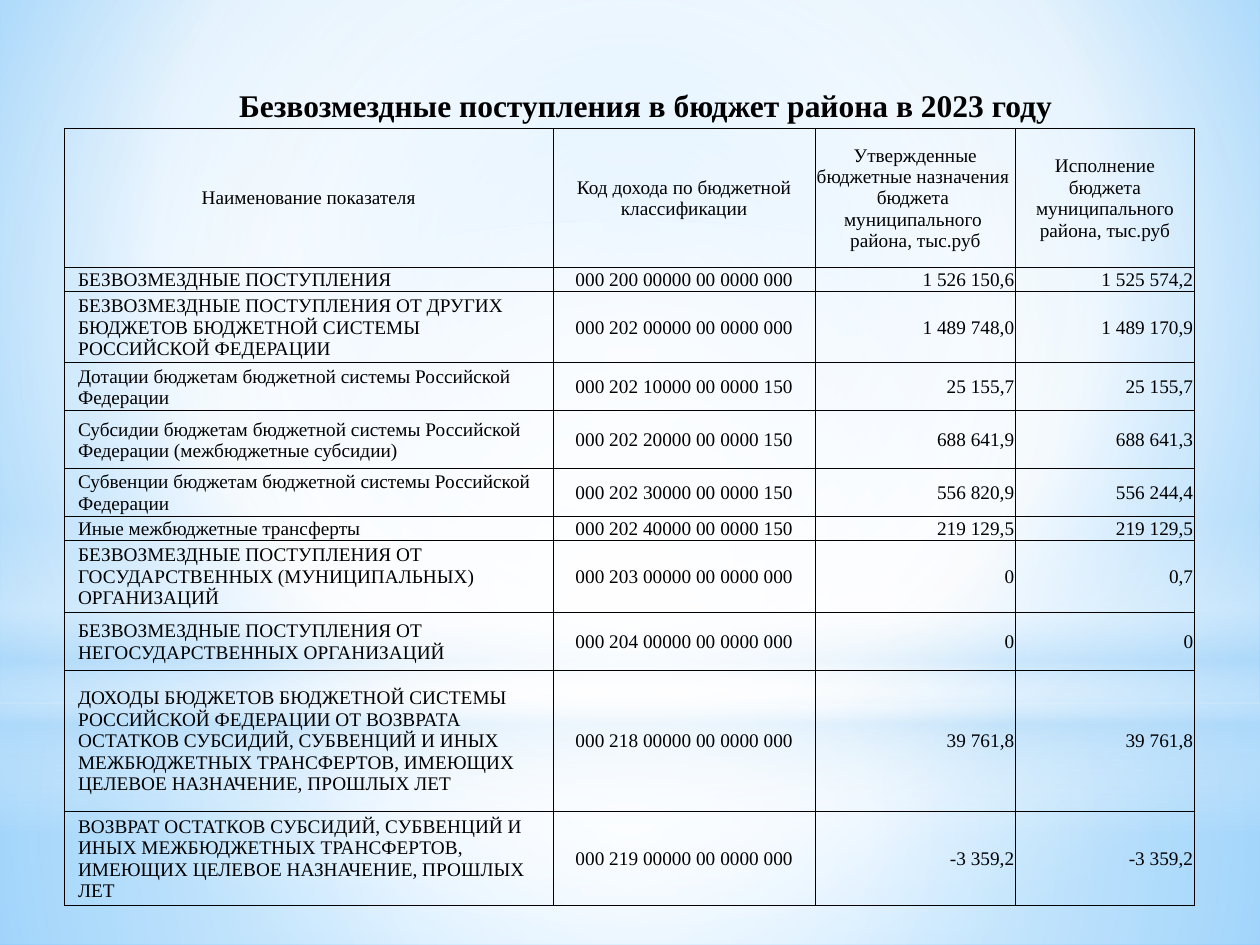
from pptx import Presentation
from pptx.dml.color import RGBColor
from pptx.enum.shapes import MSO_SHAPE
from pptx.enum.text import MSO_ANCHOR, MSO_AUTO_SIZE, PP_ALIGN
from pptx.oxml import parse_xml
from pptx.oxml.ns import nsdecls
from pptx.util import Inches, Pt

RECTANGLE, OVAL = MSO_SHAPE.RECTANGLE, MSO_SHAPE.OVAL
LEFT, CENTER, RIGHT = PP_ALIGN.LEFT, PP_ALIGN.CENTER, PP_ALIGN.RIGHT
TOP, MIDDLE, BOTTOM = MSO_ANCHOR.TOP, MSO_ANCHOR.MIDDLE, MSO_ANCHOR.BOTTOM
GROW = MSO_AUTO_SIZE.SHAPE_TO_FIT_TEXT
TITLE_ONLY = 5

BLACK = RGBColor(0x00, 0x00, 0x00)
WHITE = RGBColor(0xFF, 0xFF, 0xFF)
SKY = RGBColor(0x9E, 0xD5, 0xFF)
BLUE = RGBColor(0x5B, 0xB9, 0xFF)
MIST = RGBColor(0xB4, 0xDC, 0xFA)
FONT = "Times New Roman"

TITLE = "Безвозмездные поступления в бюджет района в 2023 году"
HEADER = (
    "Наименование показателя",
    "Код дохода по бюджетной классификации",
    "Утвержденные бюджетные назначения  бюджета  муниципального  района, тыс.руб",
    "Исполнение бюджета муниципального района, тыс.руб",
)
INCOME = [
    ("БЕЗВОЗМЕЗДНЫЕ ПОСТУПЛЕНИЯ",
     "000 200 00000 00 0000 000", "1 526 150,6", "1 525 574,2"),
    ("БЕЗВОЗМЕЗДНЫЕ ПОСТУПЛЕНИЯ ОТ ДРУГИХ БЮДЖЕТОВ БЮДЖЕТНОЙ СИСТЕМЫ РОССИЙСКОЙ ФЕДЕРАЦИИ",
     "000 202 00000 00 0000 000", "1 489 748,0", "1 489 170,9"),
    ("Дотации бюджетам бюджетной системы Российской Федерации",
     "000 202 10000 00 0000 150", "25 155,7", "25 155,7"),
    ("Субсидии бюджетам бюджетной системы Российской Федерации (межбюджетные субсидии)",
     "000 202 20000 00 0000 150", "688 641,9", "688 641,3"),
    ("Субвенции бюджетам бюджетной системы Российской Федерации",
     "000 202 30000 00 0000 150", "556 820,9", "556 244,4"),
    ("Иные межбюджетные трансферты",
     "000 202 40000 00 0000 150", "219 129,5", "219 129,5"),
    ("БЕЗВОЗМЕЗДНЫЕ ПОСТУПЛЕНИЯ ОТ ГОСУДАРСТВЕННЫХ (МУНИЦИПАЛЬНЫХ) ОРГАНИЗАЦИЙ",
     "000 203 00000 00 0000 000", "0", "0,7"),
    ("БЕЗВОЗМЕЗДНЫЕ ПОСТУПЛЕНИЯ ОТ НЕГОСУДАРСТВЕННЫХ ОРГАНИЗАЦИЙ",
     "000 204 00000 00 0000 000", "0", "0"),
    ("ДОХОДЫ БЮДЖЕТОВ БЮДЖЕТНОЙ СИСТЕМЫ РОССИЙСКОЙ ФЕДЕРАЦИИ ОТ ВОЗВРАТА ОСТАТКОВ "
     "СУБСИДИЙ, СУБВЕНЦИЙ И ИНЫХ МЕЖБЮДЖЕТНЫХ ТРАНСФЕРТОВ, ИМЕЮЩИХ ЦЕЛЕВОЕ НАЗНАЧЕНИЕ, ПРОШЛЫХ ЛЕТ",
     "000 218 00000 00 0000 000", "39 761,8", "39 761,8"),
    ("ВОЗВРАТ ОСТАТКОВ СУБСИДИЙ, СУБВЕНЦИЙ И ИНЫХ МЕЖБЮДЖЕТНЫХ ТРАНСФЕРТОВ, "
     "ИМЕЮЩИХ ЦЕЛЕВОЕ НАЗНАЧЕНИЕ, ПРОШЛЫХ ЛЕТ",
     "000 219 00000 00 0000 000", "-3 359,2", "-3 359,2"),
]
COLUMN_WIDTHS = (3.88, 2.08, 1.59, 1.42)
ROW_HEIGHTS = (1.1, 0.19, 0.57, 0.38, 0.46, 0.38, 0.19, 0.57, 0.46, 1.12, 0.75)
COLUMN_ALIGNS = (LEFT, CENTER, RIGHT, RIGHT)

CENTERED = (50, 50, 50, 50)
BACKDROP = [(0, SKY, 100), (60, WHITE, 100), (100, BLUE, 100)]
GLOWS = [
    (RECTANGLE, (0, 5.58, 10, 1.92), CENTERED,
     [(0, WHITE, 91), (37, WHITE, 76), (100, MIST, 79)]),
    (RECTANGLE, (0, 0, 10, 5.58), CENTERED,
     [(0, WHITE, 89), (48, WHITE, 62), (100, MIST, 79)]),
    (RECTANGLE, (0, 4.12, 10, 2.5), None,
     [(0, WHITE, 0), (29, WHITE, 30), (45, MIST, 40),
      (55, WHITE, 26), (65, MIST, 60), (100, WHITE, 0)]),
    (OVAL, (0, 1.75, 10, 5.58), CENTERED, [(0, WHITE, 100), (56, WHITE, 0)]),
]


def set_gradient(fill, owner, stops, focus):
    fill.gradient()
    old = owner.xpath(".//a:gradFill")[0]
    marks = "".join(
        f'<a:gs pos="{place * 1000}"><a:srgbClr val="{color}">'
        f'<a:alpha val="{opacity * 1000}"/></a:srgbClr></a:gs>'
        for place, color, opacity in stops)
    if focus:
        sides = " ".join(f'{side}="{part * 1000}"' for side, part in zip("ltrb", focus))
        shade = f'<a:path path="circle"><a:fillToRect {sides}/></a:path>'
    else:
        shade = '<a:lin ang="5400000" scaled="0"/>'
    new = parse_xml(f'<a:gradFill {nsdecls("a")} rotWithShape="1">'
                    f'<a:gsLst>{marks}</a:gsLst>{shade}</a:gradFill>')
    old.getparent().replace(old, new)


def write_text(frame, text, size=11, bold=False, align=LEFT):
    frame.word_wrap = True
    para = frame.paragraphs[0]
    para.alignment = align
    span = para.add_run()
    span.text = text
    span.font.name = FONT
    span.font.size = Pt(size)
    span.font.bold = bold
    span.font.color.rgb = BLACK


def set_borders(cell):
    properties = cell.fill and cell._tc.get_or_add_tcPr()
    for index, side in enumerate("LRTB"):
        properties.insert(index, parse_xml(
            f'<a:ln{side} {nsdecls("a")} w="{Pt(0.5)}"><a:solidFill>'
            f'<a:srgbClr val="{BLACK}"/></a:solidFill></a:ln{side}>'))


def add_income_table(page):
    rows = [HEADER] + INCOME
    frame = page.shapes.add_table(
        len(rows), len(HEADER), Inches(0.51), Inches(1.02),
        Inches(sum(COLUMN_WIDTHS)), Inches(sum(ROW_HEIGHTS)))
    table = frame.table
    table.first_row = table.horz_banding = False
    for column, width in zip(table.columns, COLUMN_WIDTHS):
        column.width = Inches(width)
    for row, height in zip(table.rows, ROW_HEIGHTS):
        row.height = Inches(height)
    for y, texts in enumerate(rows):
        for x, text in enumerate(texts):
            cell = table.cell(y, x)
            align = COLUMN_ALIGNS[x] if y else CENTER
            cell.margin_left = Inches(0.11 if align == LEFT else 0.01)
            cell.margin_right = cell.margin_top = Inches(0.01)
            cell.margin_bottom = 0
            cell.vertical_anchor = BOTTOM if y == 1 and align == RIGHT else MIDDLE
            cell.fill.background()
            set_borders(cell)
            write_text(cell.text_frame, text, align=align)


def main():
    deck = Presentation()
    deck.slide_width, deck.slide_height = Inches(10), Inches(7.5)
    page = deck.slides.add_slide(deck.slide_layouts[TITLE_ONLY])
    set_gradient(page.background.fill, page.element, BACKDROP, (20, 10, 20, 60))

    for kind, place, focus, stops in GLOWS:
        glow = page.shapes.add_shape(kind, *map(Inches, place))
        glow.shadow.inherit = False
        glow.line.fill.background()
        set_gradient(glow.fill, glow.element, stops, focus)

    add_income_table(page)

    title = page.shapes.title
    title.left, title.top, title.width, title.height = map(Inches, (0.91, 0.63, 8.43, 0.4))
    title.text_frame.vertical_anchor = TOP
    title.text_frame.auto_size = GROW
    write_text(title.text_frame, TITLE, size=18, bold=True, align=CENTER)
    title.element.getparent().append(title.element)

    deck.save("out.pptx")


if __name__ == "__main__":
    main()
